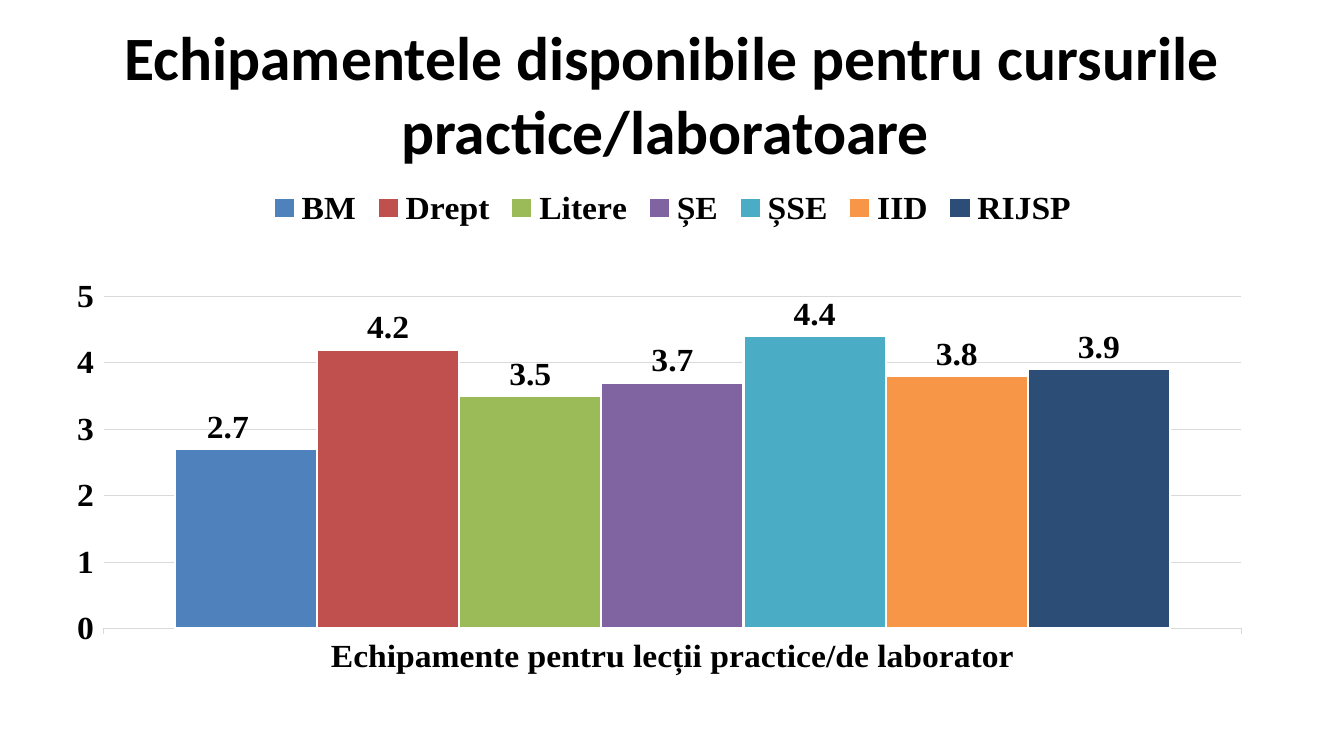
from dataclasses import dataclass
from lxml.etree import SubElement
from pptx import Presentation
from pptx.chart.data import CategoryChartData
from pptx.dml.color import RGBColor
from pptx.enum.chart import XL_CHART_TYPE, XL_LABEL_POSITION, XL_LEGEND_POSITION, XL_TICK_MARK
from pptx.enum.text import MSO_ANCHOR, PP_ALIGN
from pptx.oxml.ns import qn
from pptx.util import Inches, Pt

TITLE = "Echipamentele disponibile pentru cursurile practice/laboratoare "
CATEGORY = "Echipamente pentru lecții practice/de laborator"
FACULTIES = [
    ("BM", 2.7, "4F81BD"),
    ("Drept", 4.2, "C0504D"),
    ("Litere", 3.5, "9BBB59"),
    ("ȘE", 3.7, "8064A2"),
    ("ȘSE", 4.4, "4BACC6"),
    ("IID", 3.8, "F79646"),
    ("RIJSP", 3.9, "2C4D75"),
]
PLOT_AREA = {"x": 0.03, "y": 0.251, "w": 0.94, "h": 0.695}
FIRST_LABEL_OFFSET = {"x": -0.015, "y": 0}


@dataclass(frozen=True)
class Theme:
    title_font: str = "Calibri"
    chart_font: str = "Times New Roman"
    title_size: int = 44
    chart_size: int = 24
    text: str = "000000"
    grid: str = "D9D9D9"
    bar_edge: str = "FFFFFF"


THEME = Theme()


def format_font(font, name=THEME.chart_font, size=THEME.chart_size, color=THEME.text):
    font.name = name
    font.size = Pt(size)
    font.bold = True
    font.color.rgb = RGBColor.from_string(color)


def write_text(shape, text, align=PP_ALIGN.CENTER, anchor=MSO_ANCHOR.MIDDLE, **font_format):
    frame = shape.text_frame
    frame.word_wrap = True
    frame.vertical_anchor = anchor
    paragraph = frame.paragraphs[0]
    paragraph.alignment = align
    run = paragraph.add_run()
    run.text = text
    format_font(run.font, **font_format)


def format_line(line, color, width):
    line.color.rgb = RGBColor.from_string(color)
    line.width = Pt(width)


def fill_layout(layout, values, **modes):
    manual = SubElement(layout, qn("c:manualLayout"))
    for tag, value in {**modes, **values}.items():
        SubElement(manual, qn(f"c:{tag}")).set("val", str(value))


def place_plot(chart):
    plot_area = chart._chartSpace.chart.plotArea
    layout = plot_area.find(qn("c:layout"))
    if layout is None:
        layout = SubElement(plot_area, qn("c:layout"))
        plot_area.insert(0, layout)
    fill_layout(layout, PLOT_AREA, layoutTarget="inner", xMode="edge", yMode="edge")


def shift_label(series, offset):
    label = series.points[0].data_label
    format_font(label.font)
    label.position = XL_LABEL_POSITION.OUTSIDE_END
    element = series._element.find(f".//{qn('c:dLbl')}")
    layout = SubElement(element, qn("c:layout"))
    element.insert(1, layout)
    fill_layout(layout, offset)


def format_axes(chart):
    categories, values = chart.category_axis, chart.value_axis
    for axis in (categories, values):
        axis.major_tick_mark = XL_TICK_MARK.OUTSIDE
        axis.minor_tick_mark = XL_TICK_MARK.NONE
        format_font(axis.tick_labels.font)
    format_line(categories.format.line, THEME.grid, 0.75)
    values.format.line.fill.background()
    values.minimum_scale, values.maximum_scale, values.major_unit = 0, 5, 1
    values.has_major_gridlines = True
    format_line(values.major_gridlines.format.line, THEME.grid, 0.75)


def format_series(series, color):
    series.format.fill.solid()
    series.format.fill.fore_color.rgb = RGBColor.from_string(color)
    format_line(series.format.line, THEME.bar_edge, 1.5)
    labels = series.data_labels
    labels.show_value = True
    labels.position = XL_LABEL_POSITION.OUTSIDE_END
    format_font(labels.font)


def add_faculty_chart(slide):
    data = CategoryChartData()
    data.categories = [CATEGORY]
    for name, score, _ in FACULTIES:
        data.add_series(name, [score])
    chart = slide.shapes.add_chart(
        XL_CHART_TYPE.COLUMN_CLUSTERED,
        Inches(0.67), Inches(1.75), Inches(12), Inches(4.95), data,
    ).chart
    format_font(chart.font)
    chart.has_title = False
    chart.has_legend = True
    chart.legend.position = XL_LEGEND_POSITION.TOP
    chart.legend.include_in_layout = False
    format_font(chart.legend.font)
    plot = chart.plots[0]
    plot.gap_width = 100
    plot.overlap = 0
    plot.vary_by_categories = False
    for series, (_, _, color) in zip(plot.series, FACULTIES):
        format_series(series, color)
    shift_label(plot.series[0], FIRST_LABEL_OFFSET)
    format_axes(chart)
    place_plot(chart)


def main():
    presentation = Presentation()
    presentation.slide_width = Inches(13.33)
    presentation.slide_height = Inches(7.5)
    slide = presentation.slides.add_slide(presentation.slide_layouts[5])
    title = slide.shapes.title
    title.left, title.top = Inches(0.67), Inches(0.3)
    title.width, title.height = Inches(12), Inches(1.25)
    write_text(title, TITLE, name=THEME.title_font, size=THEME.title_size)
    add_faculty_chart(slide)
    presentation.save("out.pptx")


if __name__ == "__main__":
    main()
